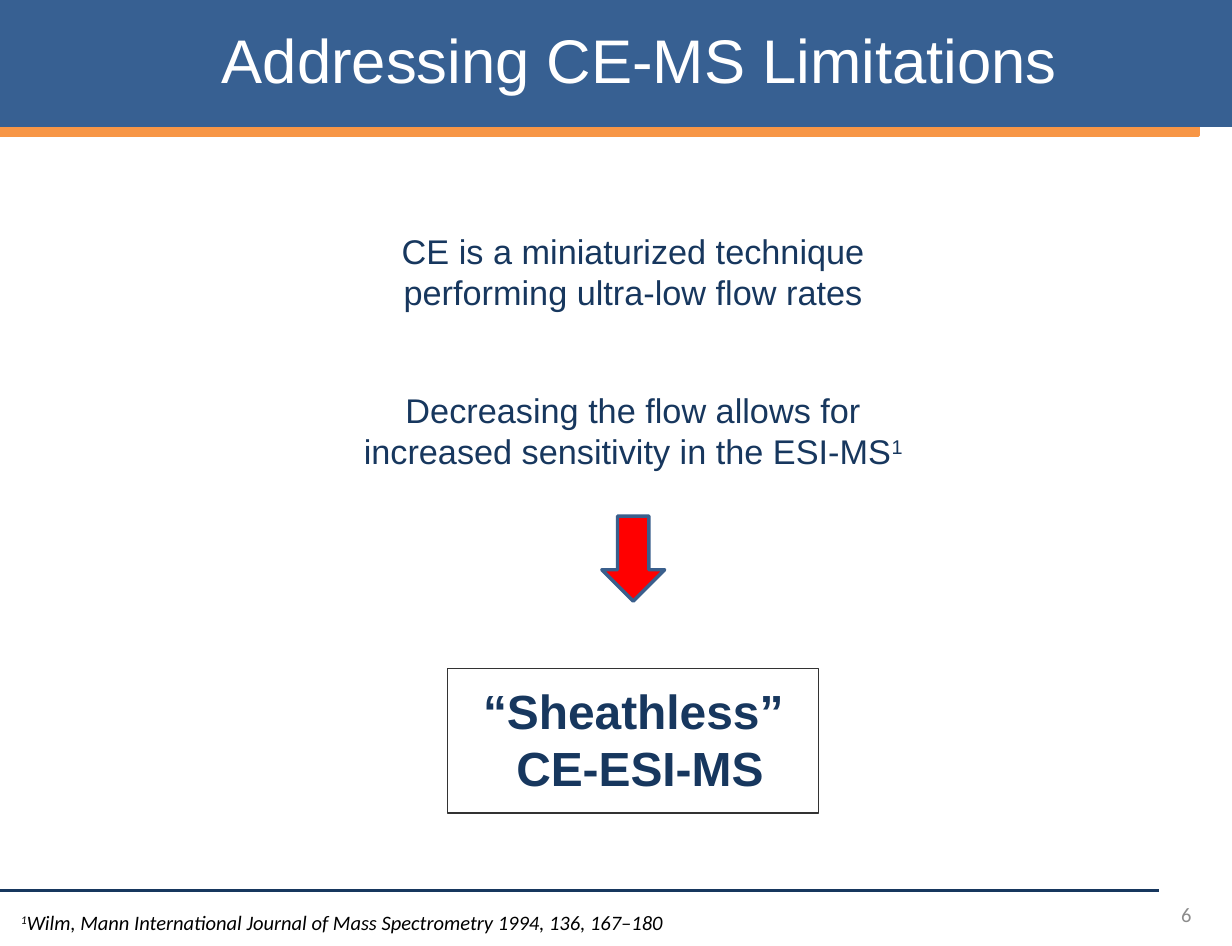
from dataclasses import dataclass

from lxml import etree
from pptx import Presentation
from pptx.dml.color import RGBColor
from pptx.enum.shapes import MSO_CONNECTOR as Connector, MSO_SHAPE as Preset
from pptx.enum.text import MSO_ANCHOR as Anchor, MSO_AUTO_SIZE as AutoSize, PP_ALIGN as Align
from pptx.oxml.ns import qn
from pptx.util import Emu, Inches, Pt


@dataclass(frozen=True)
class Theme:
    heading_font: str = "Arial"
    note_font: str = "Calibri"
    blue: str = "376092"
    navy: str = "17375E"
    orange: str = "F79646"
    red: str = "FF0000"
    arrow_edge: str = "3A5F8C"
    box_edge: str = "333333"
    grey: str = "8C8C8C"
    white: str = "FFFFFF"
    black: str = "000000"
    title_size: int = 36
    callout_size: int = 28
    body_size: int = 20
    note_size: int = 12


@dataclass(frozen=True)
class Area:
    """Left, top, width and height in grid columns and rows."""
    left: float
    top: float
    width: float
    height: float

    def lengths(self) -> tuple[Emu, ...]:
        return tuple(grid(n) for n in (self.left, self.top, self.width, self.height))


@dataclass(frozen=True)
class Style:
    font: str
    size: int
    color: str
    bold: bool = False
    italic: bool = False
    align: Align = Align.LEFT


@dataclass(frozen=True)
class Statement:
    top: float
    width: float
    text: str
    reference: str = ""


THEME = Theme()
COLUMNS, ROWS = 100, 76.8  # square cells, a tenth of an inch each
AXIS = 51.4  # column on which the content is centred
BODY = Style(THEME.heading_font, THEME.body_size, THEME.navy, align=Align.CENTER)
CALLOUT = Style(THEME.heading_font, THEME.callout_size, THEME.navy, bold=True, align=Align.CENTER)
TITLE = Style(THEME.heading_font, THEME.title_size, THEME.white)
NOTE = Style(THEME.note_font, THEME.note_size, THEME.black, italic=True)
NUMBER = Style(THEME.note_font, THEME.note_size, THEME.grey, align=Align.RIGHT)

STATEMENTS = (
    Statement(17.7, 44.2, "CE is a miniaturized technique performing ultra-low flow rates"),
    Statement(30.6, 48.5, "Decreasing the flow allows for increased sensitivity in the ESI-MS", "1"),
)


def grid(cells: float) -> Emu:
    return Inches(cells / 10)


def centred(top: float, width: float, height: float) -> Area:
    return Area(AXIS - width / 2, top, width, height)


def format_frame(frame, style: Style, margin: float = 0.5, anchor: Anchor = Anchor.TOP,
                 wrap: bool = True) -> None:
    """Set margins (in rows, doubled at the sides) and format every run."""
    frame.auto_size = AutoSize.NONE
    frame.word_wrap = wrap
    frame.vertical_anchor = anchor
    frame.margin_left = frame.margin_right = grid(2 * margin)
    frame.margin_top = frame.margin_bottom = grid(margin)
    for paragraph in frame.paragraphs:
        paragraph.alignment = style.align
        for run in paragraph.runs:
            font = run.font
            font.name, font.size = style.font, Pt(style.size)
            font.bold, font.italic = style.bold, style.italic
            font.color.rgb = RGBColor.from_string(style.color)


def add_text(slide, area: Area, parts: tuple[str, ...], style: Style, raised: int | None = None,
             **layout) -> None:
    """Add a text box; the part with index `raised` becomes superscript."""
    frame = slide.shapes.add_textbox(*area.lengths()).text_frame
    for index, part in enumerate(parts):
        run = frame.paragraphs[0].add_run()
        run.text = part
        if index == raised:
            run._r.get_or_add_rPr().set("baseline", "30000")
    format_frame(frame, style, **layout)


def add_block(slide, preset: Preset, area: Area, fill: str | None, edge: str, weight: float):
    shape = slide.shapes.add_shape(preset, *area.lengths())
    shape.shadow.inherit = False
    if fill:
        shape.fill.solid()
        shape.fill.fore_color.rgb = RGBColor.from_string(fill)
    else:
        shape.fill.background()
    shape.line.color.rgb = RGBColor.from_string(edge)
    shape.line.width = Pt(weight)
    return shape


def add_rule(slide, row: float, width: float) -> None:
    rule = slide.shapes.add_connector(Connector.STRAIGHT, 0, grid(row), grid(width), grid(row))
    rule.line.color.rgb = RGBColor.from_string(THEME.navy)
    rule.line.width = Pt(1.5)
    etree.SubElement(rule._element.spPr, qn("a:effectLst"))


def add_title(slide, area: Area, text: str) -> None:
    title = slide.shapes.title
    title.left, title.top, title.width, title.height = area.lengths()
    title.text_frame.text = text
    format_frame(title.text_frame, TITLE, wrap=False)
    title.element.getparent().append(title.element)  # in front of the banner


def main() -> None:
    presentation = Presentation()
    presentation.slide_width, presentation.slide_height = grid(COLUMNS), grid(ROWS)
    slide = presentation.slides.add_slide(presentation.slide_layouts[5])

    # Banner and footer rule
    add_block(slide, Preset.RECTANGLE, Area(0, 0, 97.3, 11), THEME.orange, THEME.orange, 2)
    add_block(slide, Preset.RECTANGLE, Area(0, 0, COLUMNS, 10.2), THEME.blue, THEME.blue, 2)
    add_rule(slide, 72.3, 94.1)
    add_text(slide, Area(74.4, 72.2, 23.3, 4.1), ("6",), NUMBER, anchor=Anchor.MIDDLE)

    # Statements leading to the conclusion
    for item in STATEMENTS:
        parts = (item.text, item.reference) if item.reference else (item.text,)
        add_text(slide, centred(item.top, item.width, 9), parts, BODY, raised=1, margin=1)
    add_block(slide, Preset.DOWN_ARROW, centred(41.9, 5.1, 6.9), THEME.red, THEME.arrow_edge, 2)
    callout = add_block(slide, Preset.RECTANGLE, centred(54.3, 30.1, 11.7), None, THEME.box_edge, 0.75)
    callout.text_frame.text = "“Sheathless”\n CE-ESI-MS"
    format_frame(callout.text_frame, CALLOUT, margin=1)

    # Reference and title
    add_text(slide, Area(0.7, 73.4, 89.1, 3.1),
             ("1", "Wilm, Mann International Journal of Mass Spectrometry 1994, 136, 167–180"),
             NOTE, raised=0)
    add_title(slide, Area(17, 1.3, 70.5, 7.2), "Addressing CE-MS Limitations")

    presentation.save("out.pptx")


if __name__ == "__main__":
    main()
